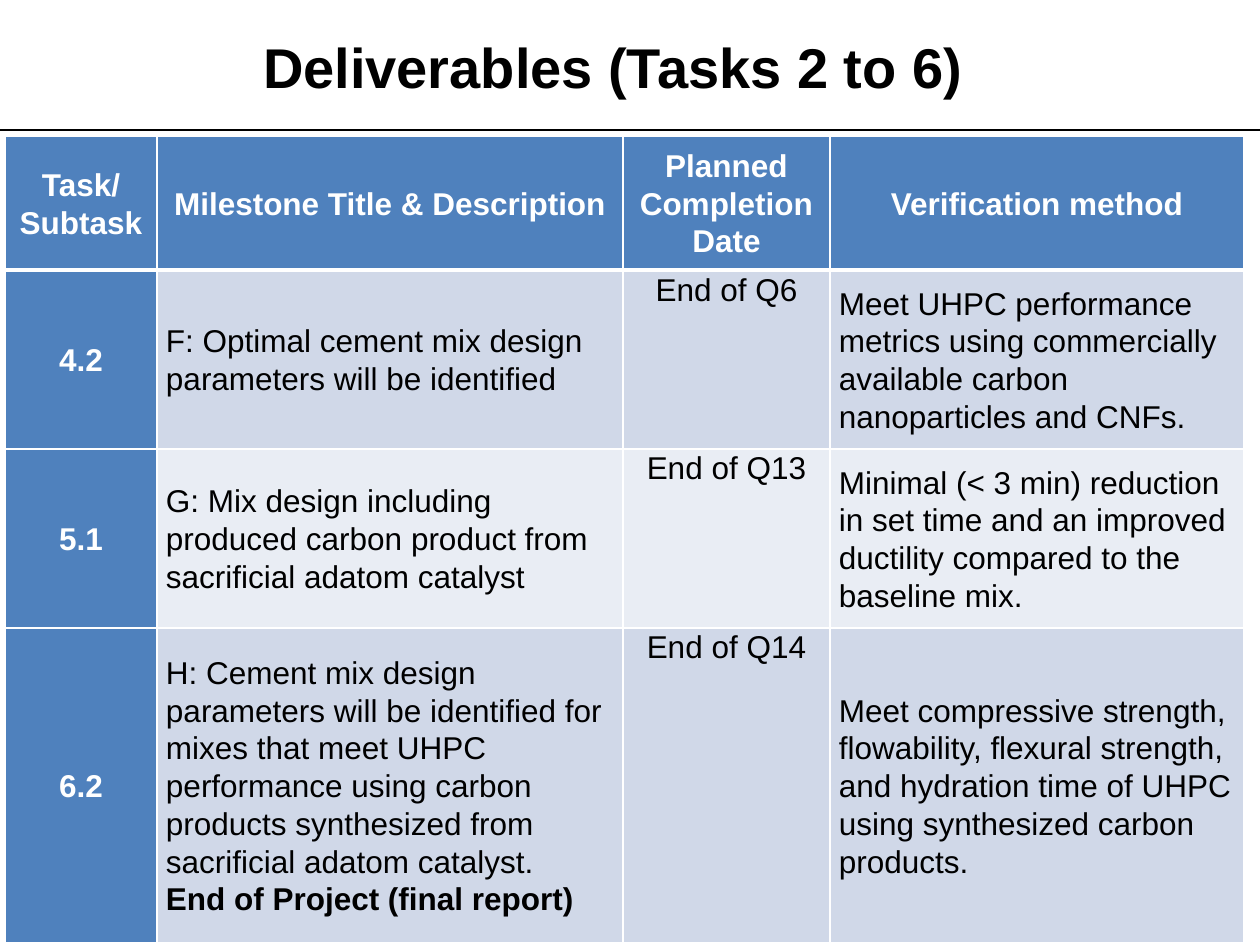
from dataclasses import dataclass

from lxml import etree
from pptx import Presentation
from pptx.dml.color import RGBColor
from pptx.enum.shapes import MSO_CONNECTOR
from pptx.enum.text import MSO_ANCHOR, PP_ALIGN
from pptx.oxml.ns import qn
from pptx.util import Pt

CENTER, LEFT = PP_ALIGN.CENTER, PP_ALIGN.LEFT
TOP, MIDDLE = MSO_ANCHOR.TOP, MSO_ANCHOR.MIDDLE
STRAIGHT = MSO_CONNECTOR.STRAIGHT
PIXELS_PER_INCH = 126
DATE_COLUMN = 2


@dataclass(frozen=True)
class Theme:
    """Colours, font and type sizes of the slide."""
    font: str = "Arial"
    title_size: int = 32
    table_size: int = 18
    line_spacing: float = 1.07
    dark: str = "000000"
    light: str = "FFFFFF"
    accent: str = "4F81BD"
    bands: tuple = ("D0D8E8", "E9EDF4")


THEME = Theme()
COLUMN_WIDTHS = (152, 466, 207, 414)
ROW_HEIGHTS = (134, 179, 179, 315)
HEADER = (
    ["Task/", "Subtask"],
    ["Milestone Title & Description"],
    ["Planned Completion Date"],
    ["Verification method"],
)
DELIVERABLES = (
    (
        ["4.2"],
        ["F: Optimal cement mix design parameters will be identified"],
        ["End of Q6"],
        ["Meet UHPC performance metrics using commercially available carbon nanoparticles and CNFs."],
    ),
    (
        ["5.1"],
        ["G: Mix design including produced carbon product from sacrificial adatom catalyst"],
        ["End of Q13"],
        ["Minimal (< 3 min) reduction in set time and an improved ductility compared to the baseline mix."],
    ),
    (
        ["6.2"],
        [
            "H: Cement mix design parameters will be identified for mixes that meet UHPC "
            "performance using carbon products synthesized from sacrificial adatom catalyst.",
            "End of Project (final report)",
        ],
        ["End of Q14"],
        [
            "Meet compressive strength, flowability, flexural strength, and hydration time "
            "of UHPC using synthesized carbon products."
        ],
    ),
)


def px(length):
    """Turn whole pixels into EMU."""
    return round(length * 914400 / PIXELS_PER_INCH)


def style_paragraph(paragraph, size, color, bold):
    """Set the font of a whole paragraph."""
    font = paragraph.font
    font.name, font.size, font.bold = THEME.font, Pt(size), bold
    font.color.rgb = RGBColor.from_string(color)


def add_rule(slide, y, width):
    """Draw the thin line below the title."""
    rule = slide.shapes.add_connector(STRAIGHT, 0, px(y), px(width), px(y))
    rule.line.color.rgb = RGBColor.from_string(THEME.dark)
    rule.line.width = Pt(0.72)
    etree.SubElement(rule._element.spPr, qn("a:effectLst"))


def add_title(slide, text, left, top, width, height):
    """Add the slide title."""
    frame = slide.shapes.add_textbox(px(left), px(top), px(width), px(height)).text_frame
    frame.word_wrap = True
    frame.margin_left = frame.margin_top = px(1)
    frame.margin_right = frame.margin_bottom = 0
    frame.text = text
    style_paragraph(frame.paragraphs[0], THEME.title_size, THEME.dark, True)


def set_borders(cell, top, bottom):
    """Give a cell white borders, with top and bottom widths in points."""
    properties = cell._tc.get_or_add_tcPr()
    for side, width in (("L", 1), ("R", 1), ("T", top), ("B", bottom)):
        line = etree.SubElement(properties, qn(f"a:ln{side}"), w=str(Pt(width)))
        fill = etree.SubElement(line, qn("a:solidFill"))
        etree.SubElement(fill, qn("a:srgbClr"), val=THEME.light)


def fill_cell(cell, lines, row, column):
    """Write and style one cell by its place in the table."""
    heading = row == 0 or column == 0
    is_date = column == DATE_COLUMN
    set_borders(cell, 3 if row == 1 else 1, 3 if row == 0 else 1)
    cell.fill.solid()
    background = THEME.accent if heading else THEME.bands[(row - 1) % 2]
    cell.fill.fore_color.rgb = RGBColor.from_string(background)
    cell.margin_left = cell.margin_right = px(9)
    cell.margin_top = cell.margin_bottom = 0
    cell.vertical_anchor = TOP if is_date and not heading else MIDDLE
    cell.text = "\n".join(lines)
    for index, paragraph in enumerate(cell.text_frame.paragraphs):
        paragraph.alignment = CENTER if heading or is_date else LEFT
        paragraph.line_spacing = THEME.line_spacing
        color = THEME.light if heading else THEME.dark
        style_paragraph(paragraph, THEME.table_size, color, heading or index > 0)


def add_deliverables(slide, left, top):
    """Add the table of deliverables."""
    rows = (HEADER, *DELIVERABLES)
    table = slide.shapes.add_table(
        len(rows), len(HEADER), px(left), px(top),
        px(sum(COLUMN_WIDTHS)), px(sum(ROW_HEIGHTS)),
    ).table
    for column, width in zip(table.columns, COLUMN_WIDTHS):
        column.width = px(width)
    for row, height in zip(table.rows, ROW_HEIGHTS):
        row.height = px(height)
    for row, texts in enumerate(rows):
        for column, lines in enumerate(texts):
            fill_cell(table.cell(row, column), lines, row, column)


def main():
    """Build and save the slide."""
    presentation = Presentation()
    presentation.slide_width, presentation.slide_height = px(1260), px(945)
    slide = presentation.slides.add_slide(presentation.slide_layouts[6])
    add_rule(slide, 130, 1260)
    add_title(slide, "Deliverables (Tasks 2 to 6)", 262, 31, 724, 69)
    add_deliverables(slide, 5, 136)
    presentation.save("out.pptx")


if __name__ == "__main__":
    main()
